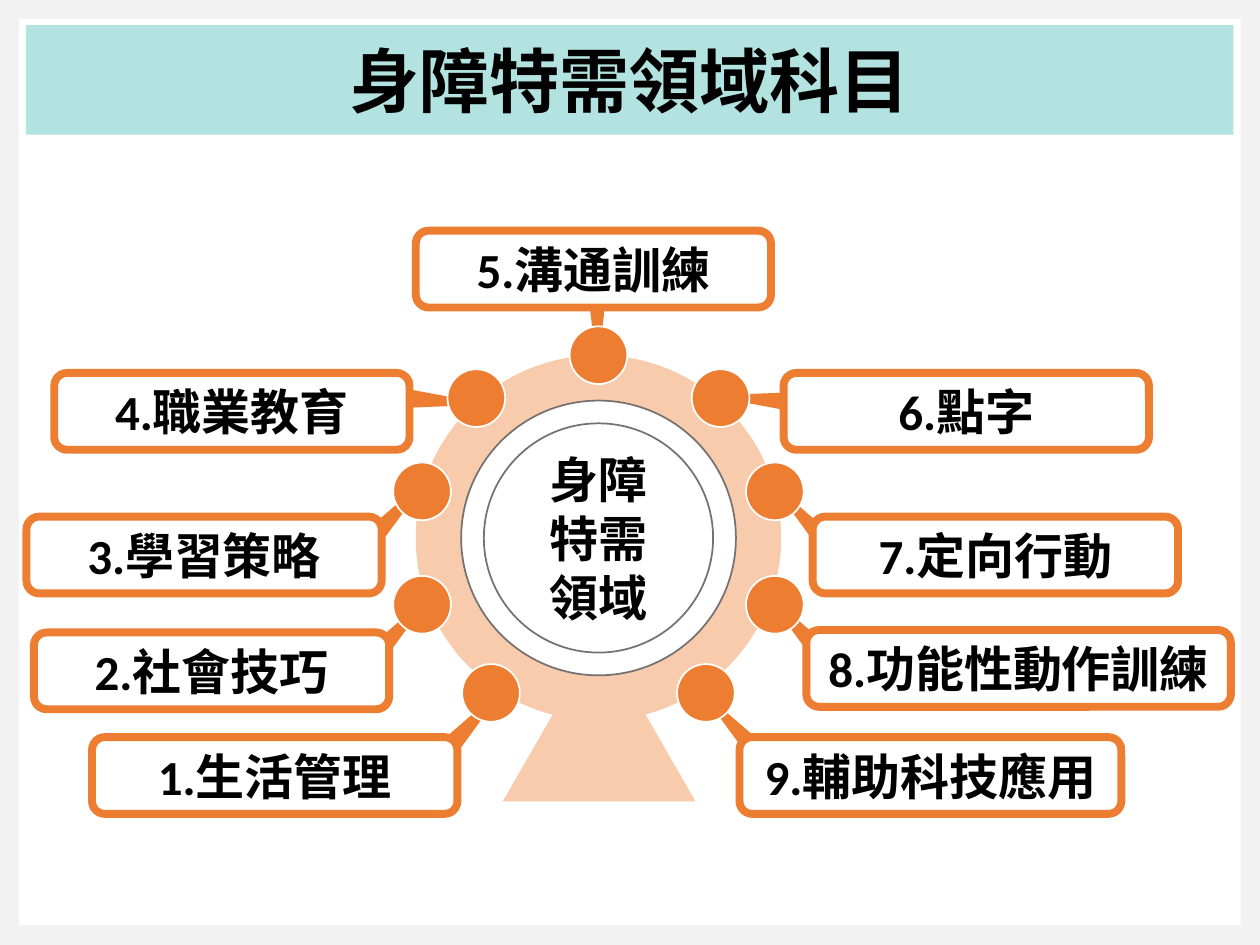
from dataclasses import dataclass

from lxml.etree import SubElement
from pptx import Presentation
from pptx.dml.color import RGBColor
from pptx.enum.shapes import MSO_SHAPE as Preset
from pptx.enum.text import MSO_ANCHOR, PP_ALIGN
from pptx.oxml.ns import qn
from pptx.shapes.autoshape import Shape
from pptx.util import Pt

CJK_FONT, LATIN_FONT = "Noto Sans CJK SC", "Calibri"
BLACK, WHITE, GREY = "000000", "FFFFFF", "767171"
ORANGE, PEACH, MINT, PAPER = "ED7D31", "F8CBAD", "9FDDD9", "F2F2F2"
HUB_X, HUB_Y = 342, 307.4
BOX_HEIGHT, DOT_SIZE = 43.9, 33
POINTER_WIDTH, POINTER_LENGTH = 13, 57.6


@dataclass(frozen=True)
class Subject:
    """A course: its box, the pointer centre and angle, and its dot on the ring."""
    label: str
    box: tuple[float, float, float]
    pointer: tuple[float, float, float]
    dot: tuple[float, float]


LOW, LOWER_MID, UPPER_MID, HIGH = (61.4, 396), (100.8, 345.6), (100.8, 280.8), (69.8, 227.5)


def on_left(spot: tuple[float, float]) -> tuple[float, float]:
    return HUB_X - spot[0], spot[1]


def on_right(spot: tuple[float, float]) -> tuple[float, float]:
    return HUB_X + spot[0], spot[1]


SUBJECTS = [
    Subject("1.生活管理", (52.6, 421.2, 208.8), (270.7, 411.8, 42.7), on_left(LOW)),
    Subject("2.社會技巧", (19.4, 361.4, 203), (229, 358.6, 42.7), on_left(LOWER_MID)),
    Subject("3.學習策略", (15.1, 295.2, 203), (226.8, 292.3, 42.7), on_left(UPPER_MID)),
    Subject("4.職業教育", (31, 213.1, 203), (251.3, 229, 94.1), on_left(HIGH)),
    Subject("5.溝通訓練", (237.6, 131.8, 203), (341.3, 184.3, 180), (HUB_X, 203)),
    Subject("6.點字", (447.8, 213.1, 208.8), (433.4, 228.2, 274.1), on_right(HIGH)),
    Subject("7.定向行動", (464.4, 295.2, 208.8), (458.6, 295.2, 317.3), on_right(UPPER_MID)),
    Subject("8.功能性動作訓練", (460.8, 360, 242.6), (454.3, 357.1, 317.3), on_right(LOWER_MID)),
    Subject("9.輔助科技應用", (422.6, 421.2, 218.2), (418.3, 414, 317.3), on_right(LOW)),
]


def paint(target, colour: str) -> None:
    """Give a fill one solid colour."""
    target.solid()
    target.fore_color.rgb = RGBColor.from_string(colour)


def add_block(slide, preset: Preset, left: float, top: float, width: float, height: float,
              fill: str, line: str | None = None, weight: float = 1) -> Shape:
    block = slide.shapes.add_shape(preset, Pt(left), Pt(top), Pt(width), Pt(height))
    block.shadow.inherit = False
    paint(block.fill, fill)
    if line:
        paint(block.line.fill, line)
        block.line.width = Pt(weight)
    else:
        block.line.fill.background()
    return block


def add_centred(slide, preset: Preset, x: float, y: float, width: float, height: float,
                fill: str, line: str | None = None) -> Shape:
    """Place a block by its centre."""
    return add_block(slide, preset, x - width / 2, y - height / 2, width, height, fill, line)


def write(block: Shape, text: str, size: float, latin: str = CJK_FONT,
          wrap: bool = False, line_spacing: Pt | None = None) -> None:
    frame = block.text_frame
    frame.word_wrap = wrap
    frame.vertical_anchor = MSO_ANCHOR.MIDDLE
    paragraph = frame.paragraphs[0]
    paragraph.alignment = PP_ALIGN.CENTER
    paragraph.line_spacing = line_spacing
    run = paragraph.add_run()
    run.text = text
    for name, value in {"size": Pt(size), "bold": True, "name": latin}.items():
        setattr(run.font, name, value)
    paint(run.font.fill, BLACK)
    run.font._element.find(qn("a:latin")).addnext(
        run.font._element.makeelement(qn("a:ea"), {"typeface": CJK_FONT}))


def add_title(slide) -> None:
    banner = add_block(slide, Preset.RECTANGLE, 14.8, 14.4, 690, 62.6, MINT)
    tint = banner.fill._xPr.find(qn("a:solidFill"))[0]
    SubElement(tint, qn("a:alpha"), val="80000")
    write(banner, "身障特需領域科目", 40)


def add_hub(slide) -> None:
    add_block(slide, Preset.ISOSCELES_TRIANGLE, 287.3, 362.2, 110.2, 95.8, PEACH)
    for size, fill, line in [(208.8, PEACH, None), (157, WHITE, GREY), (131, WHITE, GREY)]:
        disc = add_centred(slide, Preset.FLOWCHART_CONNECTOR, HUB_X, HUB_Y,
                           size, size, fill, line)
    write(disc, "身障特需領域", 28, wrap=True, line_spacing=Pt(33.6))


def main() -> None:
    deck = Presentation()
    deck.slide_width, deck.slide_height = Pt(720), Pt(540)
    slide = deck.slides.add_slide(deck.slide_layouts[6])
    paint(slide.background.fill, PAPER)
    add_block(slide, Preset.RECTANGLE, 11, 11, 698, 528 - 10.4, WHITE)
    add_title(slide)
    for subject in SUBJECTS:
        x, y, angle = subject.pointer
        pointer = add_centred(slide, Preset.ISOSCELES_TRIANGLE, x, y,
                              POINTER_WIDTH, POINTER_LENGTH, ORANGE)
        pointer.rotation = angle
    add_hub(slide)
    for subject in SUBJECTS:
        add_centred(slide, Preset.FLOWCHART_CONNECTOR, *subject.dot,
                    DOT_SIZE, DOT_SIZE, ORANGE, WHITE)
    for subject in SUBJECTS:
        left, top, width = subject.box
        box = add_block(slide, Preset.ROUNDED_RECTANGLE, left, top, width, BOX_HEIGHT,
                        WHITE, ORANGE, 4.5)
        write(box, subject.label, 28, LATIN_FONT)
    deck.save("out.pptx")


if __name__ == "__main__":
    main()
